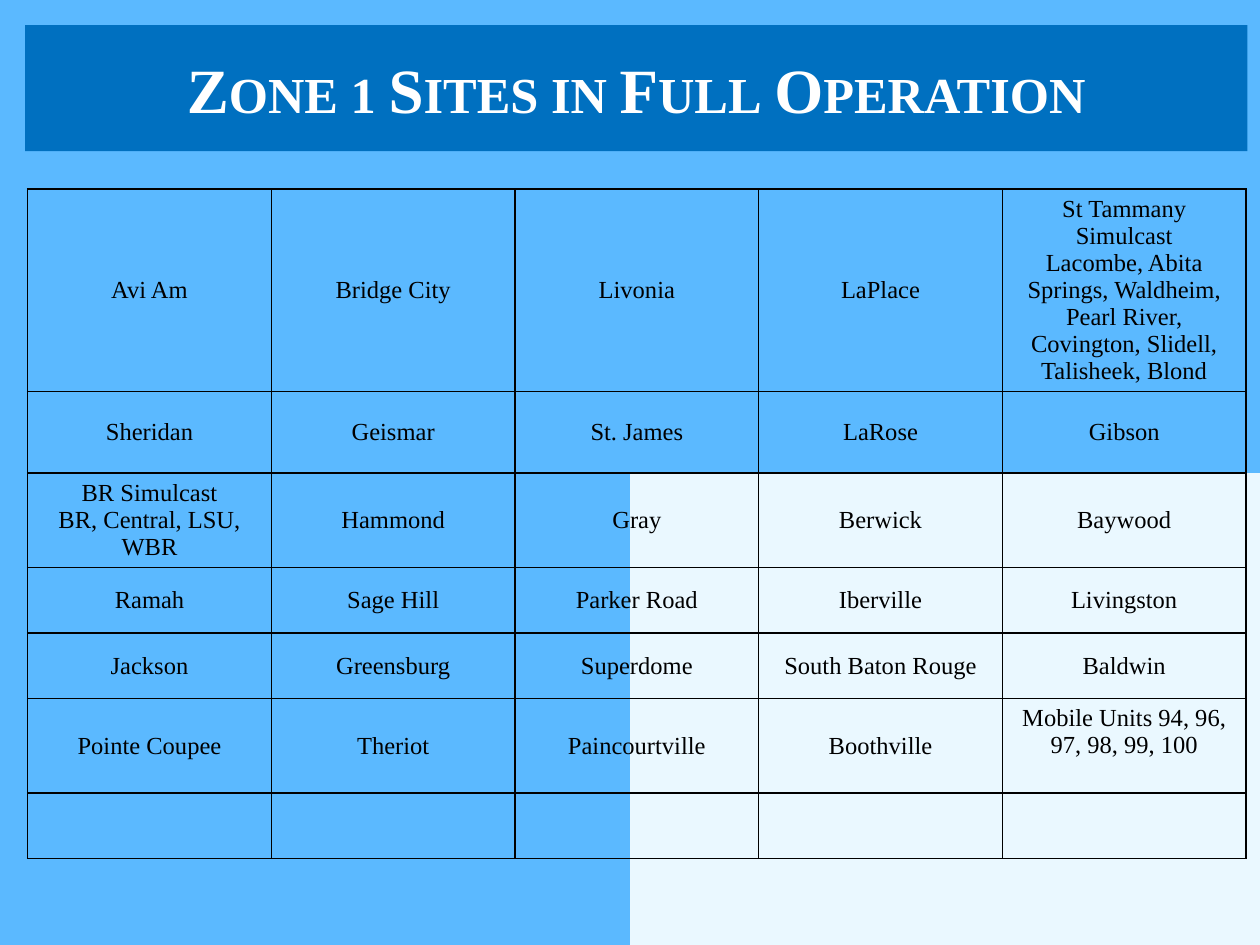
import lxml.etree
import pptx
import pptx.dml.color
import pptx.enum.text
import pptx.oxml
import pptx.oxml.ns
import pptx.util

Inches = pptx.util.Inches
Anchor = pptx.enum.text.MSO_ANCHOR
qn = pptx.oxml.ns.qn

FONT = "Times New Roman"
SKY, PALE, WHITE = "5BB9FF", "EAF8FF", "FFFFFF"
BANNER, BLACK = "0070C0", "000000"

SITES = [
    ["Avi Am", "Bridge City", "Livonia", "LaPlace",
     "St Tammany Simulcast\nLacombe, Abita Springs, Waldheim, Pearl River, "
     "Covington, Slidell, Talisheek, Blond"],
    ["Sheridan", "Geismar", "St. James", "LaRose", "Gibson"],
    ["BR Simulcast\nBR, Central, LSU, WBR", "Hammond", "Gray", "Berwick", "Baywood"],
    ["Ramah", "Sage Hill", "Parker Road", "Iberville", "Livingston"],
    ["Jackson", "Greensburg", "Superdome", "South Baton Rouge", "Baldwin"],
    ["Pointe Coupee", "Theriot", "Paincourtville", "Boothville",
     "Mobile Units 94, 96, 97, 98, 99, 100"],
    [""] * 5,
]
ROW_HEIGHTS = [1.6, 0.65, 0.75, 0.52, 0.52, 0.75, 0.52]
TOP_ALIGNED = {(5, 4)}


def rgb(hex_color):
    return pptx.dml.color.RGBColor.from_string(hex_color)


def write(frame, text, size=14, color=BLACK, bold=False, small_caps=False,
          anchor=Anchor.MIDDLE):
    frame.text = text
    frame.word_wrap = True
    frame.vertical_anchor = anchor
    for paragraph in frame.paragraphs:
        paragraph.alignment = pptx.enum.text.PP_ALIGN.CENTER
        for run in paragraph.runs:
            run.font.name = FONT
            run.font.size = pptx.util.Pt(size)
            run.font.bold = bold
            run.font.color.rgb = rgb(color)
            if small_caps:
                run.font._element.set("cap", "small")


def paint_background(slide):
    """Fill with a rectangular gradient whose stops all meet at the far end."""
    slide.background.fill.solid()
    solid = next(slide._element.iter(qn("a:solidFill")))
    stops = "".join(f'<a:gs pos="100000"><a:srgbClr val="{color}"/></a:gs>'
                    for color in (PALE, WHITE, SKY))
    gradient = pptx.oxml.parse_xml(
        f'<a:gradFill {pptx.oxml.ns.nsdecls("a")} rotWithShape="1">'
        f'<a:gsLst>{stops}</a:gsLst>'
        '<a:path path="rect"><a:fillToRect l="100000" t="100000"/></a:path>'
        '</a:gradFill>')
    solid.getparent().replace(solid, gradient)


def place_title(slide, left, top, width, height):
    title = slide.shapes.title
    title.left, title.top, title.width, title.height = left, top, width, height
    title.fill.solid()
    title.fill.fore_color.rgb = rgb(BANNER)
    write(title.text_frame, "Zone 1 Sites in Full Operation", size=36,
          color=WHITE, bold=True, small_caps=True)


def outline_cell(cell, color=BLACK, width=1):
    properties = cell._tc.get_or_add_tcPr()
    for side in ("lnL", "lnR", "lnT", "lnB"):
        line = lxml.etree.SubElement(properties, qn(f"a:{side}"),
                                     w=str(pptx.util.Pt(width)))
        fill = lxml.etree.SubElement(line, qn("a:solidFill"))
        lxml.etree.SubElement(fill, qn("a:srgbClr"), val=color)


def place_sites(slide, left, top, width, height):
    table = slide.shapes.add_table(len(SITES), len(SITES[0]),
                                   left, top, width, height).table
    table.first_row = table.horz_banding = False
    for r, (sites, row_height) in enumerate(zip(SITES, ROW_HEIGHTS)):
        table.rows[r].height = Inches(row_height)
        for c, site in enumerate(sites):
            cell = table.cell(r, c)
            outline_cell(cell)
            cell.fill.background()
            anchor = Anchor.TOP if (r, c) in TOP_ALIGNED else Anchor.MIDDLE
            write(cell.text_frame, site)
            cell.vertical_anchor = anchor


def main():
    deck = pptx.Presentation()
    deck.slide_width, deck.slide_height = Inches(10), Inches(7.5)
    slide = deck.slides.add_slide(deck.slide_layouts.get_by_name("Title Only"))
    paint_background(slide)
    place_title(slide, Inches(0.2), Inches(0.2), Inches(9.7), Inches(1))
    place_sites(slide, Inches(0.22), Inches(1.5), Inches(9.67),
                Inches(sum(ROW_HEIGHTS)))
    deck.save("out.pptx")


if __name__ == "__main__":
    main()
